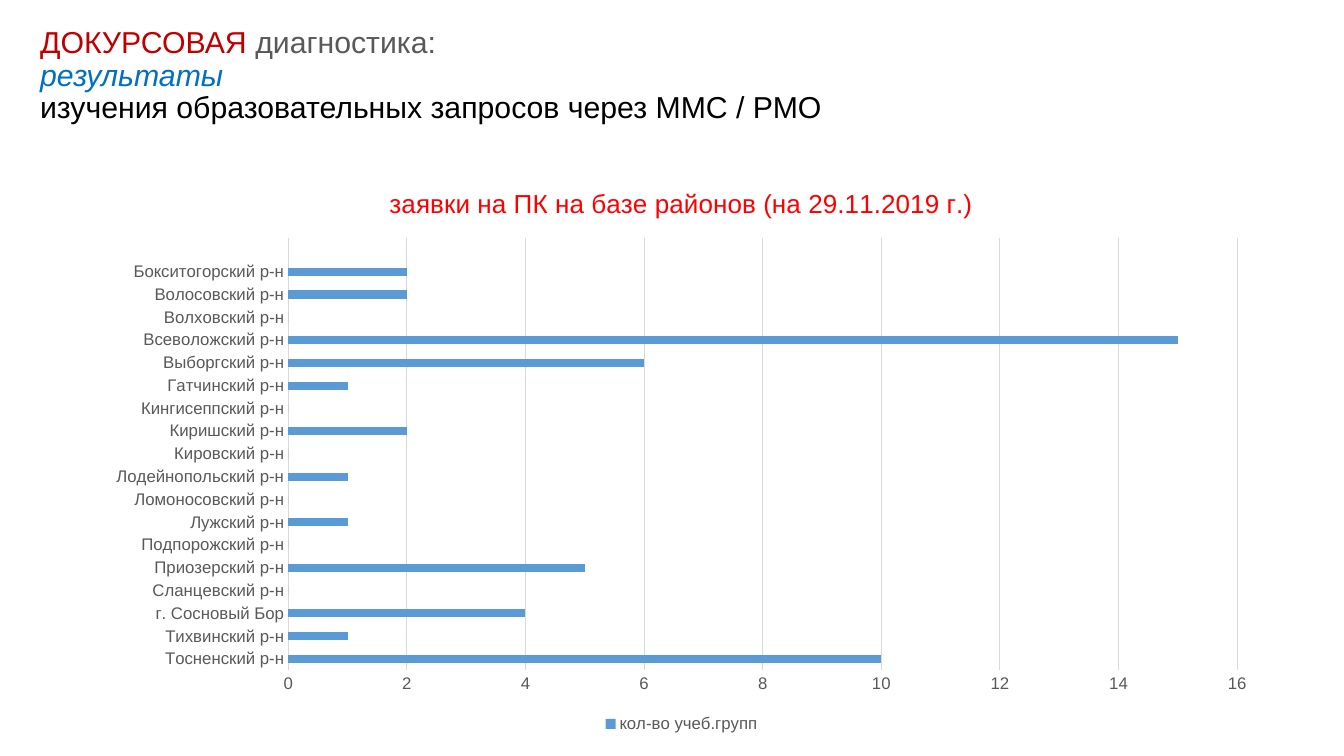
"""Build the slide on training requests by district."""
from typing import NamedTuple

from pptx import Presentation
from pptx.chart.data import CategoryChartData
from pptx.dml.color import RGBColor
from pptx.enum.chart import XL_CHART_TYPE, XL_LEGEND_POSITION, XL_TICK_MARK
from pptx.enum.text import MSO_ANCHOR, MSO_AUTO_SIZE, PP_ALIGN
from pptx.util import Cm, Pt

FONT = "Arial"
HUES = {
    "dark": "C00000",
    "gray": "595959",
    "blue": "0070C0",
    "black": "000000",
    "red": "FF0000",
    "bar": "5B9BD5",
    "grid": "D9D9D9",
}


class Part(NamedTuple):
    """One run of the heading."""
    text: str
    hue: str
    slant: bool = False
    ends: bool = False


class Area(NamedTuple):
    """One district and its number of groups."""
    name: str
    count: int | None


PARTS = [
    Part("ДОКУРСОВАЯ ", "dark"),
    Part("диагностика:", "gray", ends=True),
    Part("результаты", "blue", slant=True, ends=True),
    Part("изучения образовательных запросов через ММС / РМО", "black"),
]
AREAS = [
    Area("Тосненский р-н", 10),
    Area("Тихвинский р-н", 1),
    Area("г. Сосновый Бор", 4),
    Area("Сланцевский р-н", 0),
    Area("Приозерский р-н", 5),
    Area("Подпорожский р-н", 0),
    Area("Лужский р-н", 1),
    Area("Ломоносовский р-н", 0),
    Area("Лодейнопольский р-н", 1),
    Area("Кировский р-н", 0),
    Area("Киришский р-н", 2),
    Area("Кингисеппский р-н", 0),
    Area("Гатчинский р-н", 1),
    Area("Выборгский р-н", 6),
    Area("Всеволожский р-н", 15),
    Area("Волховский р-н", 0),
    Area("Волосовский р-н", 2),
    Area("Бокситогорский р-н", 2),
    Area("", None),
]


def tint(hue: str) -> RGBColor:
    """Return the named colour."""
    return RGBColor.from_string(HUES[hue])


def style(font, size: float, hue: str, slant: bool = False) -> None:
    """Set the look of a font."""
    font.name = FONT
    font.size = Pt(size)
    font.bold = False
    font.italic = slant
    font.color.rgb = tint(hue)


def rule(line) -> None:
    """Draw a thin light line."""
    line.color.rgb = tint("grid")
    line.width = Pt(0.75)


def add_head(slide) -> None:
    """Fill and place the title."""
    head = slide.shapes.title
    head.left, head.top, head.width, head.height = Cm(0.76), Cm(0.51), Cm(29.21), Cm(3.66)
    frame = head.text_frame
    frame.word_wrap = True
    frame.auto_size = MSO_AUTO_SIZE.NONE
    frame.vertical_anchor = MSO_ANCHOR.TOP
    frame.margin_left = frame.margin_right = Cm(0.25)
    frame.margin_top = Cm(0.18)
    para = frame.paragraphs[0]
    para.alignment = PP_ALIGN.LEFT
    para.line_spacing = 0.9
    for part in PARTS:
        run = para.add_run()
        run.text = part.text
        style(run.font, 21.6, part.hue, part.slant)
        if part.ends:
            para.add_line_break()


def add_bars(slide) -> None:
    """Draw the bar chart of requests."""
    data = CategoryChartData()
    data.categories = [area.name for area in AREAS]
    data.add_series("кол-во учеб.групп", [area.count for area in AREAS])
    chart = slide.shapes.add_chart(
        XL_CHART_TYPE.BAR_CLUSTERED, Cm(2.34), Cm(4.14), Cm(29.67), Cm(14.43), data
    ).chart
    style(chart.font, 10, "black")

    chart.has_title = True
    run = chart.chart_title.text_frame.paragraphs[0].add_run()
    run.text = "заявки на ПК на базе районов (на 29.11.2019 г.)"
    style(run.font, 18.6, "red")
    chart.chart_title.include_in_layout = False

    chart.has_legend = True
    chart.legend.position = XL_LEGEND_POSITION.BOTTOM
    chart.legend.include_in_layout = False
    style(chart.legend.font, 12, "gray")

    plot = chart.plots[0]
    plot.gap_width = 182
    plot.vary_by_categories = False
    fill = plot.series[0].format.fill
    fill.solid()
    fill.fore_color.rgb = tint("bar")

    names, scale = chart.category_axis, chart.value_axis
    for axis in (names, scale):
        axis.major_tick_mark = axis.minor_tick_mark = XL_TICK_MARK.NONE
        style(axis.tick_labels.font, 12, "gray")
    names.has_major_gridlines = False
    rule(names.format.line)
    scale.minimum_scale, scale.maximum_scale, scale.major_unit = 0, 16, 2
    scale.format.line.fill.background()
    scale.has_major_gridlines = True
    rule(scale.major_gridlines.format.line)


def main() -> None:
    """Build and save the deck."""
    deck = Presentation()
    deck.slide_width, deck.slide_height = Cm(33.87), Cm(19.05)
    slide = deck.slides.add_slide(deck.slide_layouts[5])
    add_head(slide)
    add_bars(slide)
    deck.save("out.pptx")


if __name__ == "__main__":
    main()
